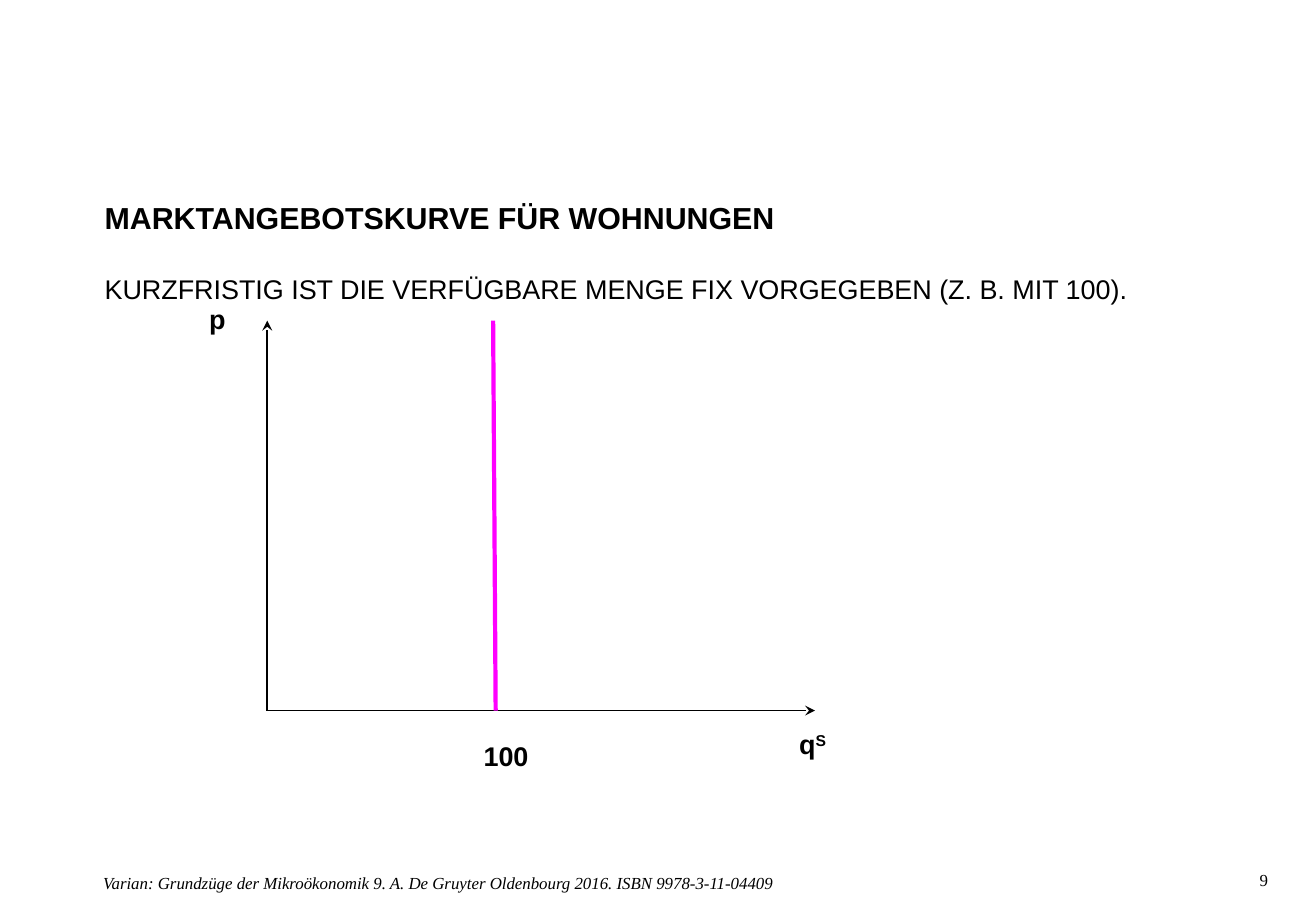
from dataclasses import dataclass

from lxml.etree import SubElement
from pptx import Presentation
from pptx.dml.color import RGBColor
from pptx.enum.shapes import MSO_CONNECTOR
from pptx.oxml.ns import qn
from pptx.util import Pt


@dataclass(frozen=True)
class Theme:
    ink: RGBColor = RGBColor(0, 0, 0)
    supply: RGBColor = RGBColor(0xFF, 0, 0xFF)
    sans: str = "Arial"
    serif: str = "Times New Roman"
    heading: float = 18
    body: float = 16
    small: float = 10
    axis_width: float = 1
    supply_width: float = 2.5


THEME = Theme()


def add_run(paragraph, text, size=THEME.body, font=THEME.sans, bold=False,
            italic=False, superscript=False):
    run = paragraph.add_run()
    run.text = text
    run.font.size = Pt(size)
    run.font.name = font
    run.font.bold = bold
    run.font.italic = italic
    run.font.color.rgb = THEME.ink
    if superscript:
        run._r.get_or_add_rPr().set("baseline", "30000")


def add_text(slide, box, text, wrap=True, **style):
    """Place a text box without insets and return its first paragraph."""
    frame = slide.shapes.add_textbox(*map(Pt, box)).text_frame
    frame.margin_left = frame.margin_right = 0
    frame.margin_top = frame.margin_bottom = 0
    frame.word_wrap = wrap
    paragraph = frame.paragraphs[0]
    add_run(paragraph, text, **style)
    return paragraph


def add_line(slide, start, end, color=THEME.ink, width=THEME.axis_width, arrow=False):
    line = slide.shapes.add_connector(MSO_CONNECTOR.STRAIGHT, *map(Pt, (*start, *end)))
    line.line.color.rgb = color
    line.line.width = Pt(width)
    if arrow:
        SubElement(line.line._get_or_add_ln(), qn("a:tailEnd"), type="stealth")
    SubElement(line._element.spPr, qn("a:effectLst"))


def add_heading(slide, left, top, width, height):
    box = slide.shapes.add_textbox(Pt(left), Pt(top), Pt(width), Pt(height))
    frame = box.text_frame
    frame.word_wrap = True
    frame.margin_left = frame.margin_top = frame.margin_bottom = 0
    frame.margin_right = Pt(11.5)
    add_run(frame.paragraphs[0], "MARKTANGEBOTSKURVE FÜR WOHNUNGEN",
            size=THEME.heading, bold=True)
    statement = frame.add_paragraph()
    statement.space_before = Pt(22)
    add_run(statement, "KURZFRISTIG IST DIE VERFÜGBARE MENGE FIX VORGEGEBEN (Z. B. MIT 100).")


def add_supply_diagram(slide, left, top, width, height):
    """Draw price and quantity axes along the box, with the fixed supply line."""
    right, bottom = left + width, top + height
    origin = (left, bottom)
    add_line(slide, origin, (left, top), arrow=True)
    add_line(slide, origin, (right, bottom), arrow=True)
    label = {"wrap": False, "bold": True}
    add_text(slide, (left - 34.5, top - 10.8, 10, 19), "p", **label)
    quantity = add_text(slide, (right - 9.4, bottom + 10.2, 17, 19), "q", **label)
    add_run(quantity, "S", bold=True, superscript=True)
    add_text(slide, (left + 128.2, bottom + 17.3, 27, 19), "100", **label)
    add_line(slide, (left + 135.4, bottom), (left + 133.9, top),
             color=THEME.supply, width=THEME.supply_width)


def add_footer(slide, left, top, width, height):
    add_text(slide, (left, top, width, height),
             "Varian: Grundzüge der Mikroökonomik 9. A. De Gruyter Oldenbourg 2016. "
             "ISBN 9978-3-11-04409",
             size=THEME.small, font=THEME.serif, italic=True)
    add_text(slide, (left + width + 8.6, top - 1.4, 28, height), "9",
             size=THEME.small, font=THEME.serif)


def main():
    deck = Presentation()
    deck.slide_width, deck.slide_height = Pt(780), Pt(540)
    slide = deck.slides.add_slide(deck.slide_layouts[6])
    add_heading(slide, 62, 118, 685, 73)
    add_supply_diagram(slide, 158.4, 190.1, 324.7, 331.1 - 100)
    add_footer(slide, 61.2, 517, 676.8, 14.4)
    deck.save("out.pptx")


if __name__ == "__main__":
    main()
